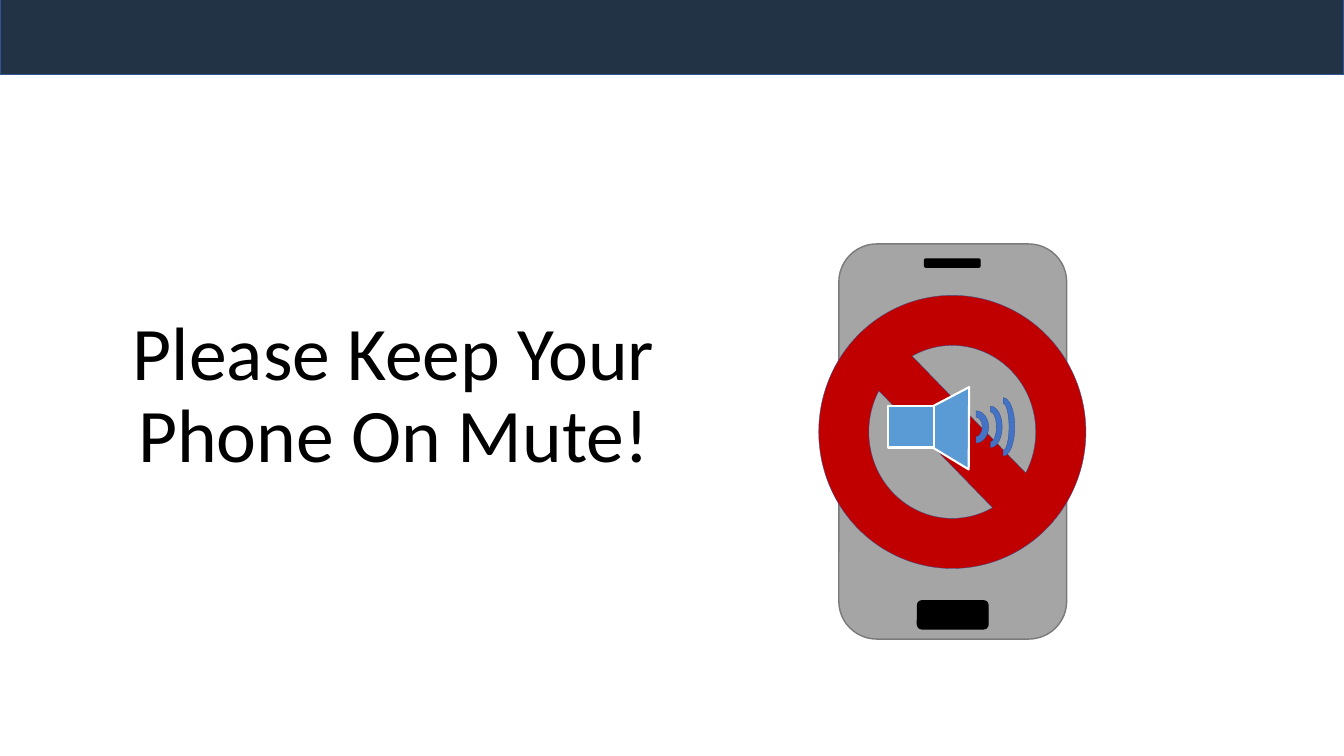
from pptx import Presentation
from pptx.dml.color import RGBColor
from pptx.enum.shapes import MSO_SHAPE as SHAPE
from pptx.enum.text import PP_ALIGN as ALIGN
from pptx.util import Inches, Pt

COLORS = {
    "navy": "223346", "edge": "325491", "black": "000000", "white": "FFFFFF",
    "grey": "A5A5A5", "dark_grey": "7A7A7A", "red": "C00000",
    "speaker": "5B9BD5", "wave": "4472C4",
}


def add_text(shapes, text, box, size=18, color="black", font="Calibri", align=ALIGN.LEFT):
    sp = shapes.add_textbox(*[Inches(v) for v in box])
    tf = sp.text_frame
    tf.word_wrap = True
    p = tf.paragraphs[0]
    p.alignment = align
    p.line_spacing = 0.9
    r = p.add_run()
    r.text = text
    r.font.name = font
    r.font.size = Pt(size)
    r.font.color.rgb = RGBColor.from_string(COLORS[color])
    return sp


def add_part(shapes, kind, box, fill, line, width, rotation=0):
    sp = shapes.add_shape(kind, *[Inches(v) for v in box])
    sp.shadow.inherit = False
    sp.rotation = rotation
    sp.fill.solid()
    sp.fill.fore_color.rgb = RGBColor.from_string(COLORS[fill])
    sp.line.color.rgb = RGBColor.from_string(COLORS[line])
    sp.line.width = Pt(width)
    return sp


prs = Presentation()
prs.slide_width = Inches(13.33)
prs.slide_height = Inches(7.5)
s = prs.slides.add_slide(prs.slide_layouts[6])

add_part(s.shapes, SHAPE.RECTANGLE, (0, -0.04, 13.33, 0.78), "navy", "edge", 1)
add_text(s.shapes, "Please Keep Your Phone On Mute!", (0.92, 3.08, 5.97, 1.75),
         size=54, align=ALIGN.CENTER)

phone = s.shapes.add_group_shape().shapes
phone_parts = [
    (SHAPE.ROUNDED_RECTANGLE, (8.32, 2.42, 2.26, 3.92), "grey", "dark_grey", 1),
    (SHAPE.NO_SYMBOL, (8.12, 2.93, 2.65, 2.71), "red", "edge", 0.25),
    (SHAPE.ROUNDED_RECTANGLE, (9.17, 2.57, 0.55, 0.08), "black", "black", 1),
    (SHAPE.ROUNDED_RECTANGLE, (9.1, 5.96, 0.7, 0.28), "black", "black", 1),
    (SHAPE.ISOSCELES_TRIANGLE, (9.01, 3.79, 0.84, 0.7), "speaker", "white", 1.5, 31.3),
    (SHAPE.RECTANGLE, (8.81, 4.03, 0.45, 0.41), "speaker", "white", 1.5),
]
for part in phone_parts:
    add_part(phone, *part)

sound_waves = [(9.66, 4.12, 0.58, 0.23), (9.62, 4.12, 0.41, 0.23), (9.52, 4.11, 0.32, 0.25)]
for box in sound_waves:
    add_part(phone, SHAPE.BLOCK_ARC, box, "wave", "edge", 0.25, 90)

prs.save("out.pptx")
